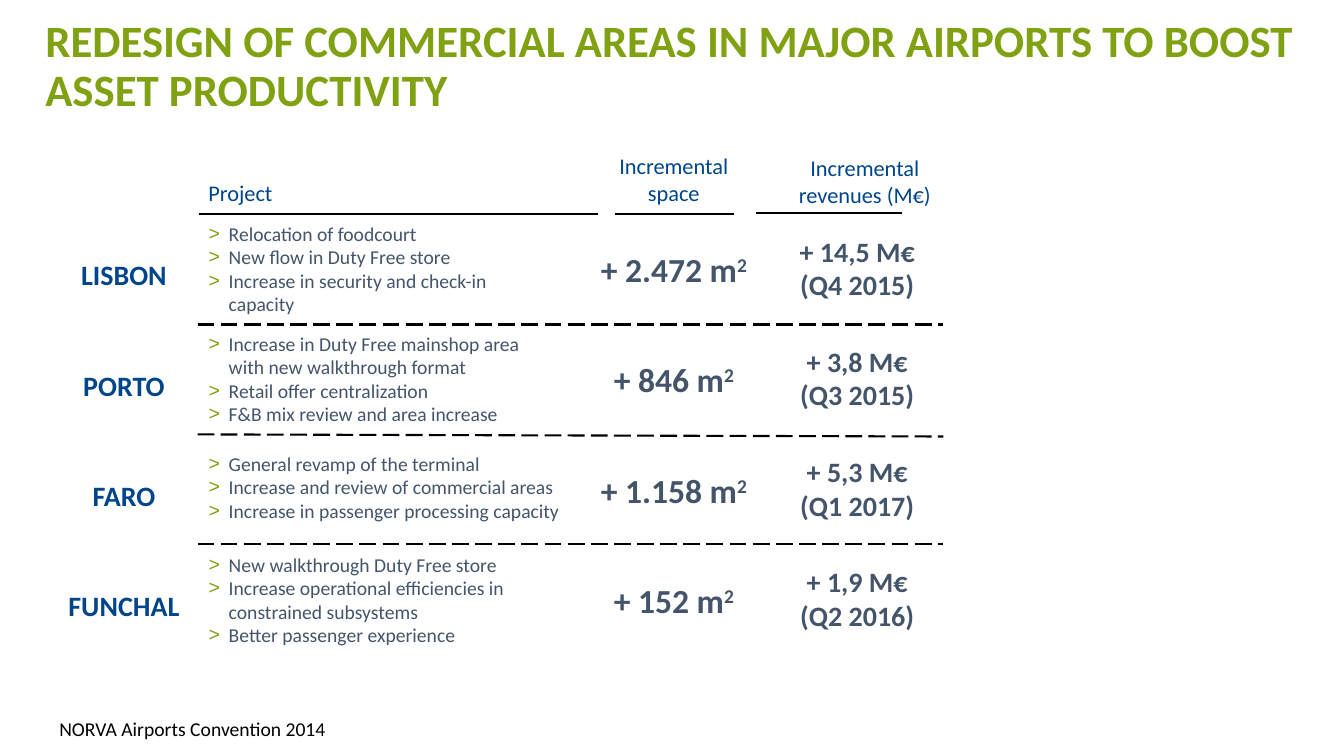
from dataclasses import dataclass

from lxml.etree import SubElement
from pptx import Presentation
from pptx.dml.color import RGBColor
from pptx.enum.dml import MSO_LINE as Dash
from pptx.enum.shapes import MSO_CONNECTOR as Connector
from pptx.enum.text import MSO_ANCHOR as Anchor, MSO_AUTO_SIZE as Fit, PP_ALIGN as Align
from pptx.oxml.ns import qn
from pptx.util import Pt


@dataclass(frozen=True)
class Theme:
    font: str = "Calibri"
    green: str = "80A112"
    blue: str = "00458A"
    slate: str = "44546A"
    black: str = "000000"
    title: int = 32
    space: int = 24
    strong: int = 20
    header: int = 16
    body: int = 14
    rule: float = 1.5
    bullet_indent: float = 14.4


class Deck:
    def __init__(self, theme, width, height):
        self.theme = theme
        self.prs = Presentation()
        self.prs.slide_width, self.prs.slide_height = Pt(width), Pt(height)

    def add_slide(self, layout):
        self.slide = self.prs.slides.add_slide(self.prs.slide_layouts[layout])

    def place(self, s, box):
        s.left, s.top, s.width, s.height = (Pt(v) for v in box)

    def format_runs(self, tf, size, color, bold, align):
        for p in tf.paragraphs:
            p.alignment = align
            for r in p.runs:
                r.font.name, r.font.size, r.font.bold = self.theme.font, Pt(size), bold
                r.font.color.rgb = RGBColor.from_string(color)

    def title(self, text, box):
        s = self.slide.shapes.title
        self.place(s, box)
        tf = s.text_frame
        tf.text = text
        tf.auto_size, tf.vertical_anchor = Fit.NONE, Anchor.TOP
        tf.paragraphs[0].line_spacing = 0.9
        self.format_runs(tf, self.theme.title, self.theme.green, True, Align.LEFT)

    def text(self, text, box, size, color, bold=False, align=Align.CENTER, anchor=Anchor.TOP):
        s = self.slide.shapes.add_textbox(*(Pt(v) for v in box))
        tf = s.text_frame
        tf.text = text
        tf.word_wrap, tf.auto_size, tf.vertical_anchor = True, Fit.SHAPE_TO_FIT_TEXT, anchor
        self.format_runs(tf, size, color, bold, align)
        return tf

    def area(self, amount, box):
        """Write an amount in square metres with a raised 2."""
        tf = self.text(amount + " m", box, self.theme.space, self.theme.slate, True,
                       anchor=Anchor.MIDDLE)
        r = tf.paragraphs[0].add_run()
        r.text = "2"
        self.format_runs(tf, self.theme.space, self.theme.slate, True, Align.CENTER)
        r.font._element.set("baseline", "30000")

    def bullets(self, idx, items, box):
        s = self.slide.placeholders[idx]
        self.place(s, box)
        tf = s.text_frame
        tf.text = "\n".join(items)
        tf.auto_size, tf.vertical_anchor = Fit.NONE, Anchor.TOP
        indent = Pt(self.theme.bullet_indent)
        for p in tf.paragraphs:
            pPr = p._p.get_or_add_pPr()
            pPr.set("marL", str(indent))
            pPr.set("indent", str(-indent))
            color = SubElement(pPr, qn("a:buClr"))
            SubElement(color, qn("a:srgbClr"), val=self.theme.green)
            SubElement(pPr, qn("a:buFont"), typeface="Arial")
            SubElement(pPr, qn("a:buChar"), char=">")
            p.space_before, p.line_spacing = Pt(0), 1.0
        self.format_runs(tf, self.theme.body, self.theme.slate, False, Align.LEFT)

    def line(self, x1, y1, x2, y2, dash=None):
        s = self.slide.shapes.add_connector(
            Connector.STRAIGHT, *(Pt(v) for v in (x1, y1, x2, y2)))
        s.line.color.rgb = RGBColor.from_string(self.theme.black)
        s.line.width = Pt(self.theme.rule)
        if dash:
            s.line.dash_style = dash
        SubElement(s._element.spPr, qn("a:effectLst"))


COMPARISON = 4
ROW_PITCH = 78.7

# airport, (list top, width, height), projects, space, revenues, quarter
AIRPORTS = [
    ("LISBON", (154.8, 249.1, 74.9),
     ["Relocation of foodcourt", "New flow in Duty Free store",
      "Increase in security and check-in capacity"],
     "+ 2.472", "+ 14,5 M€", "(Q4 2015)"),
    ("PORTO", (233.3, 249.1, 74.9),
     ["Increase in Duty Free mainshop area with new walkthrough format",
      "Retail offer centralization", "F&B mix review and area increase"],
     "+ 846", "+ 3,8 M€", "(Q3 2015)"),
    ("FARO", (319, 271.4, 58.3),
     ["General revamp of the terminal", "Increase and review of commercial areas",
      "Increase in passenger processing capacity"],
     "+ 1.158", "+ 5,3 M€", "(Q1 2017)"),
    ("FUNCHAL", (391, 271.4, 74.9),
     ["New walkthrough Duty Free store",
      "Increase operational efficiencies in constrained subsystems",
      "Better passenger experience"],
     "+ 152", "+ 1,9 M€", "(Q2 2016)"),
]
HEADERS = [
    ("Project", (141.8, 124.6, 249.1, 26.6), Align.LEFT),
    ("Incremental\nspace", (406.8, 105.1, 149, 46.1), Align.CENTER),
    ("Incremental\nrevenues (M€)", (520.6, 106.6, 194.4, 46.1), Align.CENTER),
]
HEADER_RULES = [(141.8, 427, 152.6), (439.2, 524.2, 152.6), (540, 644.4, 151.9)]
SEPARATORS = [(231.8, 231.8), (310.3, 311.8), (388.8, 388.8)]


def main():
    theme = Theme()
    deck = Deck(theme, 960, 540)
    deck.add_slide(COMPARISON)
    deck.title("REDESIGN OF COMMERCIAL AREAS IN MAJOR AIRPORTS TO BOOST ASSET PRODUCTIVITY",
               (25.2, 10.1, 907.9, 73.4))

    for text, box, align in HEADERS:
        deck.text(text, box, theme.header, theme.blue, align=align)
    for left, right, y in HEADER_RULES:
        deck.line(left, y, right, y)
    for start, end in SEPARATORS:
        deck.line(141.1, start, 673.9, end, Dash.LONG_DASH)

    for i, (name, (top, width, height), projects, space, revenues, quarter) in enumerate(AIRPORTS):
        dy = i * ROW_PITCH
        deck.text(name, (36, 180.7 + dy, 105.1, 31.7), theme.strong, theme.blue, True)
        deck.bullets(i + 1, projects, (141.8, top, width, height))
        deck.area(space, (419.8, 174.4 + dy, 123.1, 36))
        deck.text(f"{revenues}\n{quarter}", (550.8, 163.6 + dy, 123.1, 55.4),
                  theme.strong, theme.slate, True, anchor=Anchor.MIDDLE)

    deck.text("NORVA Airports Convention 2014", (35.3, 508.3, 324, 24.5),
              theme.body, theme.black, align=Align.LEFT, anchor=Anchor.MIDDLE)
    deck.prs.save("out.pptx")


if __name__ == "__main__":
    main()
